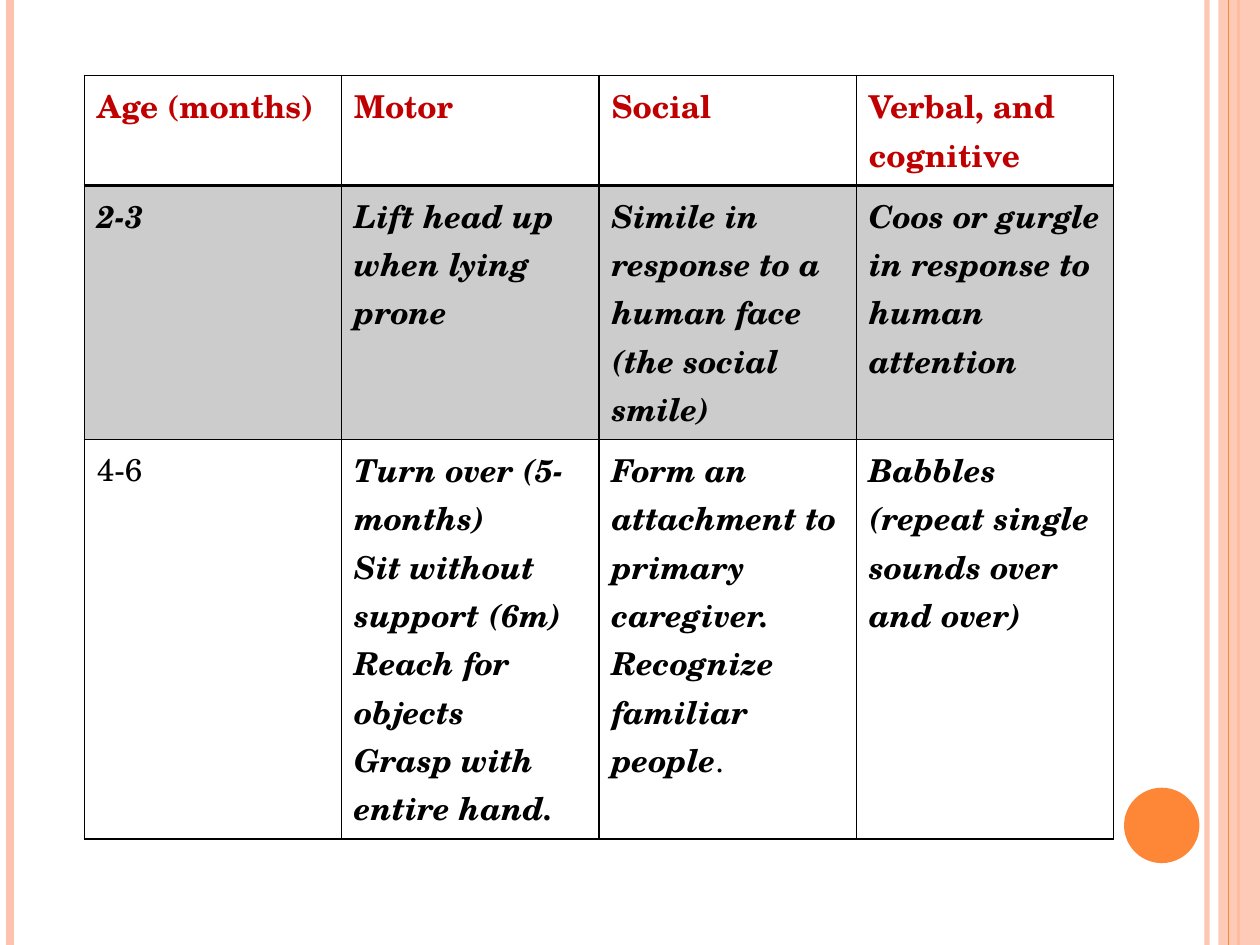
from dataclasses import dataclass

from lxml.etree import SubElement as Sub
from pptx import Presentation
from pptx.dml.color import RGBColor as Rgb
from pptx.enum.shapes import MSO_CONNECTOR as Link, MSO_SHAPE as Form
from pptx.oxml.ns import qn
from pptx.util import Cm, Pt


@dataclass(frozen=True)
class Theme:
    font: str = "TeX Gyre Schola"
    size: float = 18
    ink: str = "000000"
    head: str = "C00000"
    peach: str = "FEC3AE"
    orange: str = "FE8637"


@dataclass(frozen=True)
class Stripe:
    x: float
    color: str
    width: float
    alpha: int = 100


@dataclass(frozen=True)
class Block:
    form: Form
    box: tuple[float, float, float, float]
    color: str
    alpha: int = 100


THEME = Theme()
WIDE, HIGH = 25.4, 19.05

# Back to front
DECOR = [
    Stripe(24.33, THEME.peach, 3, 93),
    Stripe(0.2, THEME.peach, 4.5),
    Stripe(24.97, THEME.orange, 1.5),
    Block(Form.RECTANGLE, (24.56, 0, 0.84, HIGH), THEME.peach, 87),
    Stripe(24.77, THEME.orange, 0.75),
    Block(Form.OVAL, (22.66, 15.88, 1.52, 1.52), THEME.orange),
]

ROWS = [
    ["Age (months)", "Motor", "Social", "Verbal, and cognitive"],
    ["2-3", "Lift head up when lying prone",
     "Simile in response to a human face (the social smile)",
     "Coos or gurgle in response to human attention"],
    ["4-6",
     "Turn over (5-months)\nSit without support (6m)\n"
     "Reach for objects\nGrasp with entire hand.",
     "Form an attachment to primary caregiver.\nRecognize familiar people",
     "Babbles (repeat single sounds over and over)"],
]
ROW_HIGH = [1.57, 1.04, 7.75]
TABLE = (1.7, 1.52, 20.75, 13.59)


def fade(node, alpha: int) -> None:
    """Make the colours below a node partly transparent."""
    if alpha < 100:
        for clr in node.iter(qn("a:srgbClr")):
            Sub(clr, qn("a:alpha"), val=str(alpha * 1000))


def draw_stripe(slide, item: Stripe) -> None:
    line = slide.shapes.add_connector(
        Link.STRAIGHT, Cm(item.x), 0, Cm(item.x), Cm(HIGH))
    line.line.color.rgb = Rgb.from_string(item.color)
    line.line.width = Pt(item.width)
    props = line._element.spPr
    fade(props, item.alpha)
    Sub(props, qn("a:effectLst"))


def draw_block(slide, item: Block) -> None:
    shape = slide.shapes.add_shape(item.form, *map(Cm, item.box))
    shape.shadow.inherit = False
    shape.fill.solid()
    shape.fill.fore_color.rgb = Rgb.from_string(item.color)
    shape.line.fill.background()
    fade(shape._element.spPr, item.alpha)


def add_run(para, text: str, *, color: str = THEME.ink, bold: bool = True,
            italic: bool = True) -> None:
    run = para.add_run()
    run.text = text
    font = run.font
    font.name, font.size = THEME.font, Pt(THEME.size)
    font.bold, font.italic = bold, italic
    font.color.rgb = Rgb.from_string(color)


def write(frame, text: str, **style) -> None:
    for i, part in enumerate(text.split("\n")):
        para = frame.add_paragraph() if i else frame.paragraphs[0]
        add_run(para, part, **style)


def paint(cell, shaded: bool) -> None:
    if shaded:
        cell.fill.solid()
        cell.fill.fore_color.rgb = Rgb.from_string(THEME.ink)
        fade(cell._tc.tcPr, 20)
    else:
        cell.fill.background()


def edge(cell, top: float, base: float) -> None:
    """Draw the four borders, which come before the fill."""
    props = cell._tc.get_or_add_tcPr()
    for i, (side, width) in enumerate(zip("LRTB", (1, 1, top, base))):
        line = Sub(props, qn(f"a:ln{side}"), w=str(Pt(width)))
        Sub(Sub(line, qn("a:solidFill")), qn("a:srgbClr"), val=THEME.ink)
        props.insert(i, line)


def draw_table(slide) -> None:
    holder = slide.shapes.add_table(len(ROWS), len(ROWS[0]), *map(Cm, TABLE))
    table = holder.table
    table.first_row = table.horz_banding = False
    for row, high in zip(table.rows, ROW_HIGH):
        row.height = Cm(high)
    holder.height = Cm(TABLE[3])

    for r, texts in enumerate(ROWS):
        for c, text in enumerate(texts):
            cell = table.cell(r, c)
            if r == 0:
                style = dict(color=THEME.head, italic=False)
            else:
                plain = text == "4-6"
                style = dict(bold=not plain, italic=not plain)
            write(cell.text_frame, text, **style)
            paint(cell, shaded=r == 1)
            edge(cell, top=2 if r == 1 else 1, base=2 if r == 0 else 1)

    # Upright full stop after the last social skill
    add_run(table.cell(2, 2).text_frame.paragraphs[-1], ".",
            bold=False, italic=False)


def main() -> None:
    deck = Presentation()
    deck.slide_width, deck.slide_height = Cm(WIDE), Cm(HIGH)
    slide = deck.slides.add_slide(deck.slide_layouts[6])

    # Side stripes and dot
    for item in DECOR:
        if isinstance(item, Stripe):
            draw_stripe(slide, item)
        else:
            draw_block(slide, item)

    # Milestones
    draw_table(slide)
    deck.save("out.pptx")


if __name__ == "__main__":
    main()
